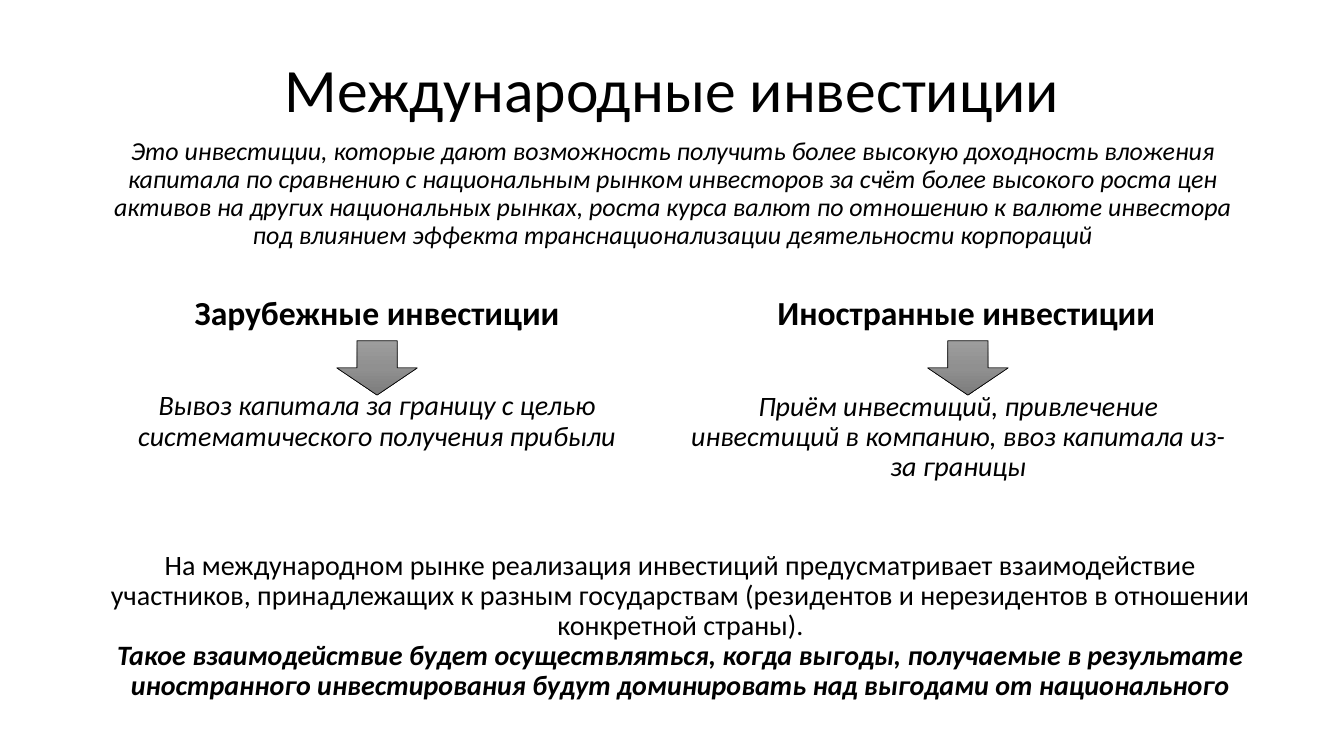
from copy import deepcopy

from pptx import Presentation, util as u
from pptx.dml.color import RGBColor
from pptx.enum import shapes, text
from pptx.oxml.ns import qn

WIDTH, HEIGHT = 13.33, 7.5
MARGIN, CONTENT_WIDTH = 0.92, 11.5
ARROW_WIDTH, ARROW_HEIGHT = 0.8, 0.54
ARROW_GRADIENT = [(0, "9D9D9D"), (0.5, "909090"), (1, "7C7C7C")]
MIDDLE, BOTTOM = text.MSO_ANCHOR.MIDDLE, text.MSO_ANCHOR.BOTTOM

TITLE = "Международные инвестиции"
DEFINITION = (
    "Это инвестиции, которые дают возможность получить более высокую доходность "
    "вложения капитала по сравнению с национальным рынком инвесторов за счёт более "
    "высокого роста цен активов на других национальных рынках, роста курса валют по "
    "отношению к валюте инвестора под влиянием эффекта транснационализации "
    "деятельности корпораций")
# Heading, description, heading box, description box, arrow centre
COLUMNS = [
    ("Зарубежные инвестиции",
     "Вывоз капитала за границу с целью систематического получения прибыли",
     (MARGIN, 2.81, 5.64, 0.54), (MARGIN, 3.47, 5.64, 1.43), 3.74),
    ("Иностранные инвестиции",
     "Приём инвестиций, привлечение инвестиций в компанию, ввоз капитала из-за границы",
     (6.75, 2.81, 5.67, 0.54), (6.67, 3.69, 5.67, 1.3), 9.6),
]
MARKET = (
    "На международном рынке реализация инвестиций предусматривает взаимодействие "
    "участников, принадлежащих к разным государствам (резидентов и нерезидентов в "
    "отношении конкретной страны).")
CONDITION = (
    "Такое взаимодействие будет осуществляться, когда выгоды, получаемые в результате "
    "иностранного инвестирования будут доминировать над выгодами от национального")


def color(hex_string):
    return RGBColor.from_string(hex_string)


def place(shape, box):
    shape.left, shape.top, shape.width, shape.height = map(u.Inches, box)


def write(shape, lines, size, anchor=MIDDLE):
    """Fill a shape with centred lines given as (text, bold, italic)."""
    frame = shape.text_frame
    frame.word_wrap = True
    frame.auto_size = text.MSO_AUTO_SIZE.NONE
    frame.vertical_anchor = anchor
    frame.text = "\n".join(line for line, _, _ in lines)
    for paragraph, (_, bold, italic) in zip(frame.paragraphs, lines):
        paragraph.alignment = text.PP_ALIGN.CENTER
        paragraph.line_spacing = 0.9
        font = paragraph.font
        font.name, font.size = "Calibri", u.Pt(size)
        font.bold, font.italic = bold, italic
        font.color.rgb = color("000000")


def add_text(slide, box, lines, size, anchor=MIDDLE):
    write(slide.shapes.add_textbox(*map(u.Inches, box)), lines, size, anchor)


def add_title(slide, box):
    place(slide.shapes.title, box)
    write(slide.shapes.title, [(TITLE, False, False)], 44)


def add_arrow(slide, box):
    arrow = slide.shapes.add_shape(shapes.MSO_SHAPE.DOWN_ARROW, *map(u.Inches, box))
    arrow.shadow.inherit = False
    arrow.line.color.rgb = color("000000")
    arrow.line.width = u.Pt(0.5)
    arrow.fill.gradient()
    arrow.fill.gradient_angle = 270
    # The default gradient has two stops; a third is added
    stop_list = arrow._element.spPr.find(".//" + qn("a:gsLst"))
    stop_list.append(deepcopy(stop_list[0]))
    for stop, (position, shade) in zip(arrow.fill.gradient_stops, ARROW_GRADIENT):
        stop.position = position
        stop.color.rgb = color(shade)


def add_column(slide, heading, description, heading_box, description_box, centre):
    add_text(slide, heading_box, [(heading, True, False)], 24, BOTTOM)
    add_text(slide, description_box, [(description, False, True)], 20)
    add_arrow(slide, (centre - ARROW_WIDTH / 2, 3.38, ARROW_WIDTH, ARROW_HEIGHT))


def main():
    presentation = Presentation()
    presentation.slide_width = u.Inches(WIDTH)
    presentation.slide_height = u.Inches(HEIGHT)
    slide = presentation.slides.add_slide(presentation.slide_layouts[5])

    # Title and definition
    add_title(slide, (MARGIN, 0.4, CONTENT_WIDTH, 1.03))
    add_text(slide, (MARGIN, 1.3, CONTENT_WIDTH, 1.25), [(DEFINITION, False, True)], 18.5)

    # Two kinds of investment
    for column in COLUMNS:
        add_column(slide, *column)

    # Conclusion
    add_text(slide, (1, 5.33, CONTENT_WIDTH, 1.77),
             [(MARKET, False, False), (CONDITION, True, True)], 20)

    presentation.save("out.pptx")


if __name__ == "__main__":
    main()
